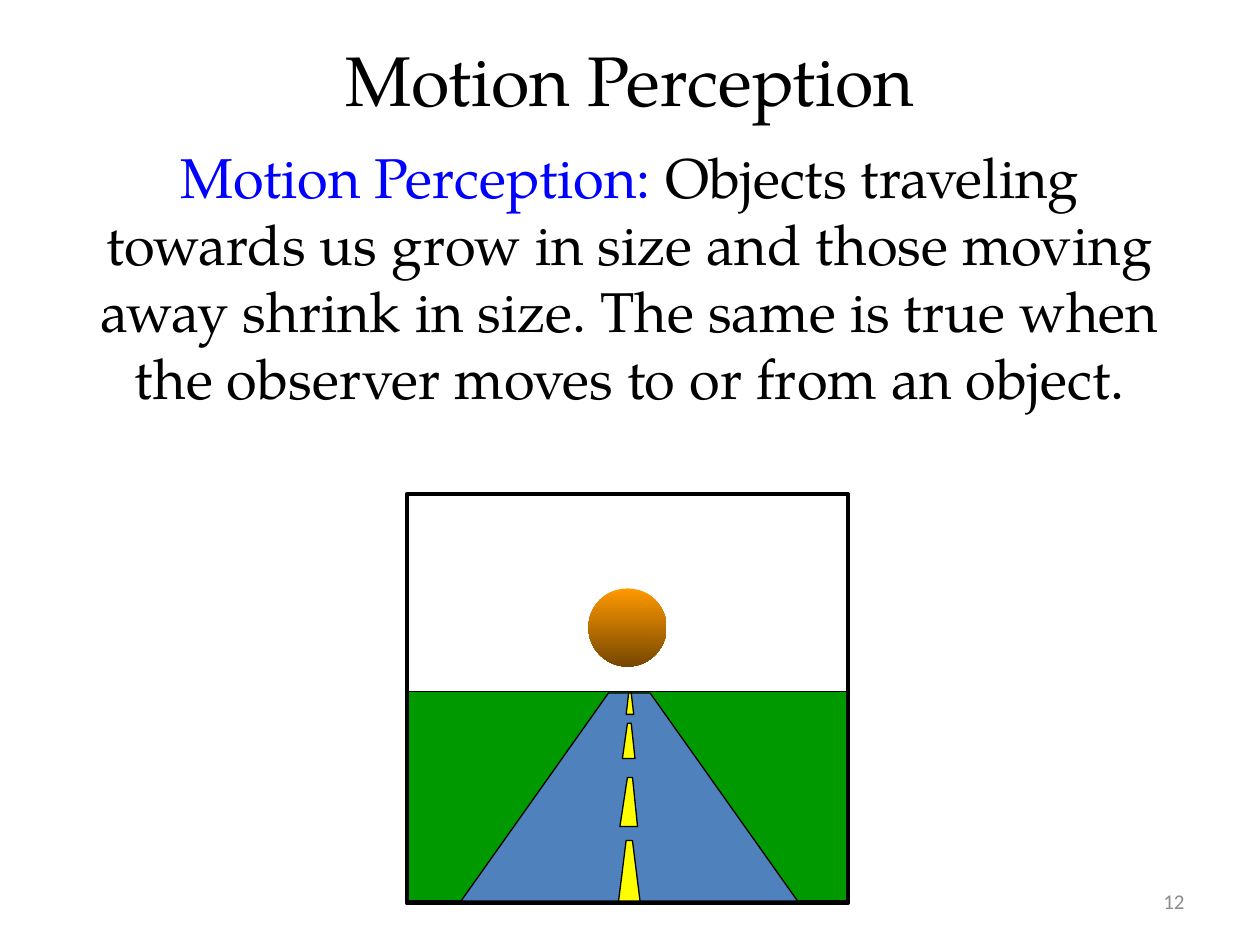
from dataclasses import dataclass

from pptx import Presentation, util as u
from pptx.dml.color import RGBColor
from pptx.enum import shapes, text


@dataclass(frozen=True)
class Theme:
    serif: str = "TeX Gyre Pagella"
    sans: str = "Calibri"
    title: int = 40
    body: int = 32
    number: int = 12
    thin: float = 0.75
    thick: float = 2.25
    ink: str = "000000"
    term: str = "0000FF"
    muted: str = "8C8C8C"
    grass: str = "009900"
    road: str = "4F81BD"
    dash: str = "FFFF00"
    ball_top: str = "FF9900"
    ball_bottom: str = "764700"


THEME = Theme()
ROAD = (5.5, 7.15, 4.83, 5.16, 3.66, 6.33)
DASHES = [
    (6.67, 7.15, 4.97, 5.02, 4.91, 5.08),
    (6.17, 6.56, 4.98, 5.02, 4.92, 5.06),
    (5.74, 6.02, 4.98, 5.01, 4.94, 5.04),
    (5.5, 5.67, 4.99, 5.01, 4.97, 5.03),
]


def rgb(color):
    return RGBColor.from_string(color)


def add_text(s, box, runs, size, font, align, anchor):
    tf = s.shapes.add_textbox(*map(u.Inches, box)).text_frame
    for name, value in {"word_wrap": True, "vertical_anchor": anchor}.items():
        setattr(tf, name, value)
    p = tf.paragraphs[0]
    p.alignment = align
    for words, color in runs:
        r = p.add_run()
        r.text = words
        for name, value in {"name": font, "size": u.Pt(size)}.items():
            setattr(r.font, name, value)
        r.font.color.rgb = rgb(color)


def style(sp, fill=None, line=None):
    sp.shadow.inherit = False
    if fill:
        sp.fill.solid()
        sp.fill.fore_color.rgb = rgb(fill)
    else:
        sp.fill.background()
    if line:
        sp.line.color.rgb = rgb(THEME.ink)
        sp.line.width = u.Pt(line)
    else:
        sp.line.fill.background()


def add_preset(s, kind, box, fill=None, line=None):
    sp = s.shapes.add_shape(kind, *map(u.Inches, box))
    style(sp, fill, line)
    return sp


def add_ball(s, box):
    sp = add_preset(s, shapes.MSO_SHAPE.OVAL, box)
    sp.fill.gradient()
    sp.fill.gradient_angle = 270
    colors = (THEME.ball_top, THEME.ball_bottom)
    for position, (stop, color) in enumerate(zip(sp.fill.gradient_stops, colors)):
        stop.position = position
        stop.color.rgb = rgb(color)


def add_trapezoid(s, edges, fill):
    top, bottom, top_left, top_right, low_left, low_right = map(u.Inches, edges)
    outline = s.shapes.build_freeform(top_left, top)
    outline.add_line_segments(
        [(top_right, top), (low_right, bottom), (low_left, bottom)], close=True
    )
    style(outline.convert_to_shape(), fill, THEME.thin)


def add_scene(s):
    rect = shapes.MSO_SHAPE.RECTANGLE
    add_preset(s, rect, (3.23, 5.49, 3.5, 1.66), THEME.grass, THEME.thin)
    add_preset(s, rect, (3.23, 3.92, 3.5, 3.25), line=THEME.thick)
    add_ball(s, (4.67, 4.67, 0.62, 0.62))
    add_trapezoid(s, ROAD, THEME.road)
    for edges in DASHES:
        add_trapezoid(s, edges, THEME.dash)


def main():
    prs = Presentation()
    prs.slide_width, prs.slide_height = u.Inches(10), u.Inches(7.5)
    s = prs.slides.add_slide(prs.slide_layouts[6])
    align, anchor = text.PP_ALIGN, text.MSO_ANCHOR
    add_text(s, (7.17, 6.95, 2.33, 0.4), [("12", THEME.muted)],
             THEME.number, THEME.sans, align.RIGHT, anchor.MIDDLE)
    add_text(s, (0.5, 0, 9, 1.25), [("Motion Perception", THEME.ink)],
             THEME.title, THEME.serif, align.CENTER, anchor.MIDDLE)
    definition = [
        ("Motion Perception: ", THEME.term),
        ("Objects traveling towards us grow in size and those moving away "
         "shrink in size. The same is true when the observer moves to or "
         "from an object.", THEME.ink),
    ]
    add_text(s, (0.5, 1.08, 9, 2.25), definition,
             THEME.body, THEME.serif, align.CENTER, anchor.TOP)
    add_scene(s)
    prs.save("out.pptx")


if __name__ == "__main__":
    main()
